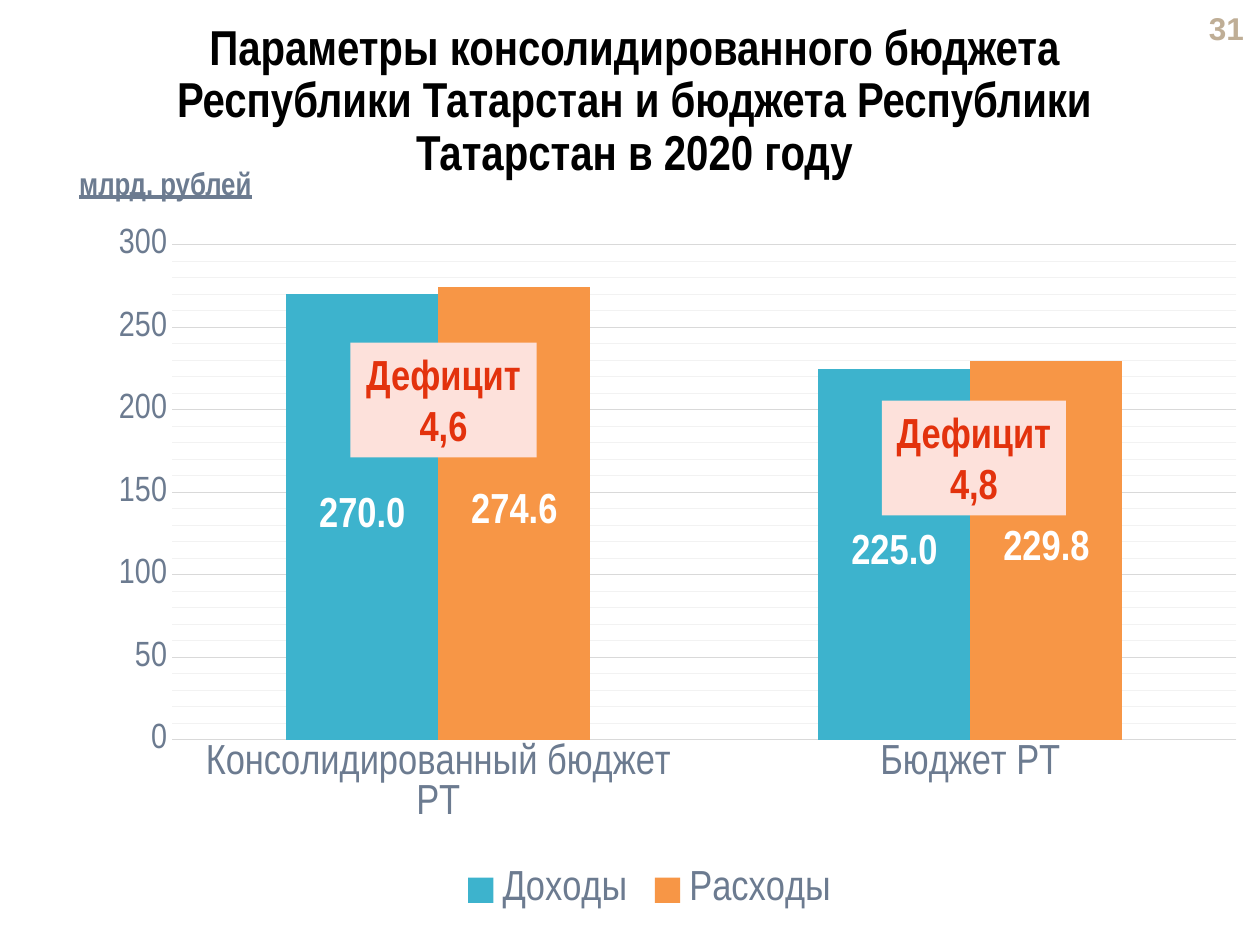
from lxml import etree
from pptx import Presentation
from pptx.chart.data import CategoryChartData
from pptx.dml.color import RGBColor
from pptx.enum.chart import XL_CHART_TYPE, XL_LABEL_POSITION, XL_LEGEND_POSITION, XL_TICK_MARK
from pptx.enum.shapes import MSO_SHAPE
from pptx.enum.text import MSO_ANCHOR, PP_ALIGN
from pptx.oxml.ns import qn
from pptx.util import Inches, Pt

BLACK = RGBColor(0x00, 0x00, 0x00)
WHITE = RGBColor(0xFF, 0xFF, 0xFF)
SLATE = RGBColor(0x6C, 0x7B, 0x90)
SAND = RGBColor(0xBF, 0xAE, 0x96)
TEAL = RGBColor(0x3D, 0xB3, 0xCD)
ORANGE = RGBColor(0xF7, 0x96, 0x46)
RED = RGBColor(0xE3, 0x32, 0x0D)
PINK = RGBColor(0xFD, 0xE1, 0xDB)
GRID = RGBColor(0xD9, 0xD9, 0xD9)
MINOR_GRID = RGBColor(0xF2, 0xF2, 0xF2)
FONT = "Arial Narrow"

TITLE = "Параметры консолидированного бюджета Республики Татарстан и бюджета Республики Татарстан в 2020 году"
UNITS = "млрд. рублей"
PAGE = "31"
CATEGORIES = ["Консолидированный бюджет РТ", "Бюджет РТ"]
SERIES = [("Доходы", (270.0, 225.0), TEAL), ("Расходы", (274.6, 229.8), ORANGE)]
DEFICITS = [("Дефицит 4,6", (2.78, 2.72, 1.48, 0.91)),
            ("Дефицит 4,8", (7.0, 3.18, 1.46, 0.91))]
PLOT = {"x": 0.1, "y": 0.035, "w": 0.892, "h": 0.709}


def inches(box):
    return [Inches(v) for v in box]


def style(font, size, color, bold=False, name=FONT):
    font.name, font.size, font.bold = name, Pt(size), bold
    font.color.rgb = color


def set_text(sp, text, size, color, align, name=FONT):
    tf = sp.text_frame
    tf.word_wrap = True
    tf.text = text
    p = tf.paragraphs[0]
    p.alignment = align
    style(p.font, size, color, True, name)
    return p


def set_line(fmt, color):
    fmt.line.color.rgb = color
    fmt.line.width = Pt(0.75)


def color_minor_gridlines(axis, color):
    lines = axis._element.find(qn("c:minorGridlines"))
    props = etree.SubElement(lines, qn("c:spPr"))
    ln = etree.SubElement(props, qn("a:ln"), w=str(Pt(0.75)))
    fill = etree.SubElement(ln, qn("a:solidFill"))
    etree.SubElement(fill, qn("a:srgbClr"), val=str(color))


def place_plot(chart):
    """Fix the inner plot area at shares of the chart's size."""
    area = chart._chartSpace.chart.plotArea
    for old in area.findall(qn("c:layout")):
        area.remove(old)
    layout = etree.Element(qn("c:layout"))
    manual = etree.SubElement(layout, qn("c:manualLayout"))
    settings = [("layoutTarget", "inner"), ("xMode", "edge"), ("yMode", "edge"), *PLOT.items()]
    for tag, val in settings:
        etree.SubElement(manual, qn(f"c:{tag}")).set("val", str(val))
    area.insert(0, layout)


def add_budget_chart(slide):
    data = CategoryChartData(number_format="0.0")
    data.categories = CATEGORIES
    for name, values, _ in SERIES:
        data.add_series(name, values)
    chart = slide.shapes.add_chart(
        XL_CHART_TYPE.COLUMN_CLUSTERED, *inches((0.42, 1.75, 9.47, 5.54)), data).chart
    style(chart.font, 10, BLACK, name="Calibri")
    chart.has_title = False
    chart.has_legend = True
    chart.legend.position = XL_LEGEND_POSITION.BOTTOM
    chart.legend.include_in_layout = False
    style(chart.legend.font, 24, SLATE)

    cat, val = chart.category_axis, chart.value_axis
    for axis, size in ((cat, 24), (val, 20)):
        axis.major_tick_mark = axis.minor_tick_mark = XL_TICK_MARK.NONE
        style(axis.tick_labels.font, size, SLATE)
    set_line(cat.format, GRID)
    val.format.line.fill.background()
    val.minimum_scale, val.maximum_scale = 0, 300
    val.major_unit, val.minor_unit = 50, 10
    val.tick_labels.number_format = "0"
    val.tick_labels.number_format_is_linked = False
    val.has_major_gridlines = val.has_minor_gridlines = True
    set_line(val.major_gridlines.format, GRID)
    color_minor_gridlines(val, MINOR_GRID)

    plot = chart.plots[0]
    plot.gap_width, plot.overlap = 150, 0
    plot.vary_by_categories = False
    for series, (_, _, color) in zip(plot.series, SERIES):
        series.format.fill.solid()
        series.format.fill.fore_color.rgb = color
        labels = series.data_labels
        labels.show_value = True
        labels.position = XL_LABEL_POSITION.CENTER
        labels.number_format = "0.0"
        labels.number_format_is_linked = False
        style(labels.font, 24, WHITE, True)
    place_plot(chart)


def main():
    prs = Presentation()
    prs.slide_width, prs.slide_height = Inches(10), Inches(7.5)
    slide = prs.slides.add_slide(prs.slide_layouts[5])

    title = slide.shapes.title
    title.left, title.top, title.width, title.height = inches((0.61, 0.13, 8.85, 0.76))
    p = set_text(title, TITLE, 28, BLACK, PP_ALIGN.CENTER)
    p.line_spacing = 0.9
    title.text_frame.vertical_anchor = MSO_ANCHOR.TOP

    page = slide.shapes.add_textbox(*inches((9.33, 0.05, 0.64, 0.34)))
    set_text(page, PAGE, 18, SAND, PP_ALIGN.RIGHT, "Arial")
    page.text_frame.vertical_anchor = MSO_ANCHOR.MIDDLE

    add_budget_chart(slide)

    units = slide.shapes.add_textbox(*inches((0.53, 1.25, 1.89, 0.4)))
    set_text(units, UNITS, 18, SLATE, PP_ALIGN.LEFT).font.underline = True

    for text, box in DEFICITS:
        sp = slide.shapes.add_shape(MSO_SHAPE.RECTANGLE, *inches(box))
        sp.shadow.inherit = False
        sp.fill.solid()
        sp.fill.fore_color.rgb = PINK
        sp.line.fill.background()
        set_text(sp, text, 24, RED, PP_ALIGN.CENTER)
        sp.text_frame.vertical_anchor = MSO_ANCHOR.TOP

    prs.save("out.pptx")


if __name__ == "__main__":
    main()
